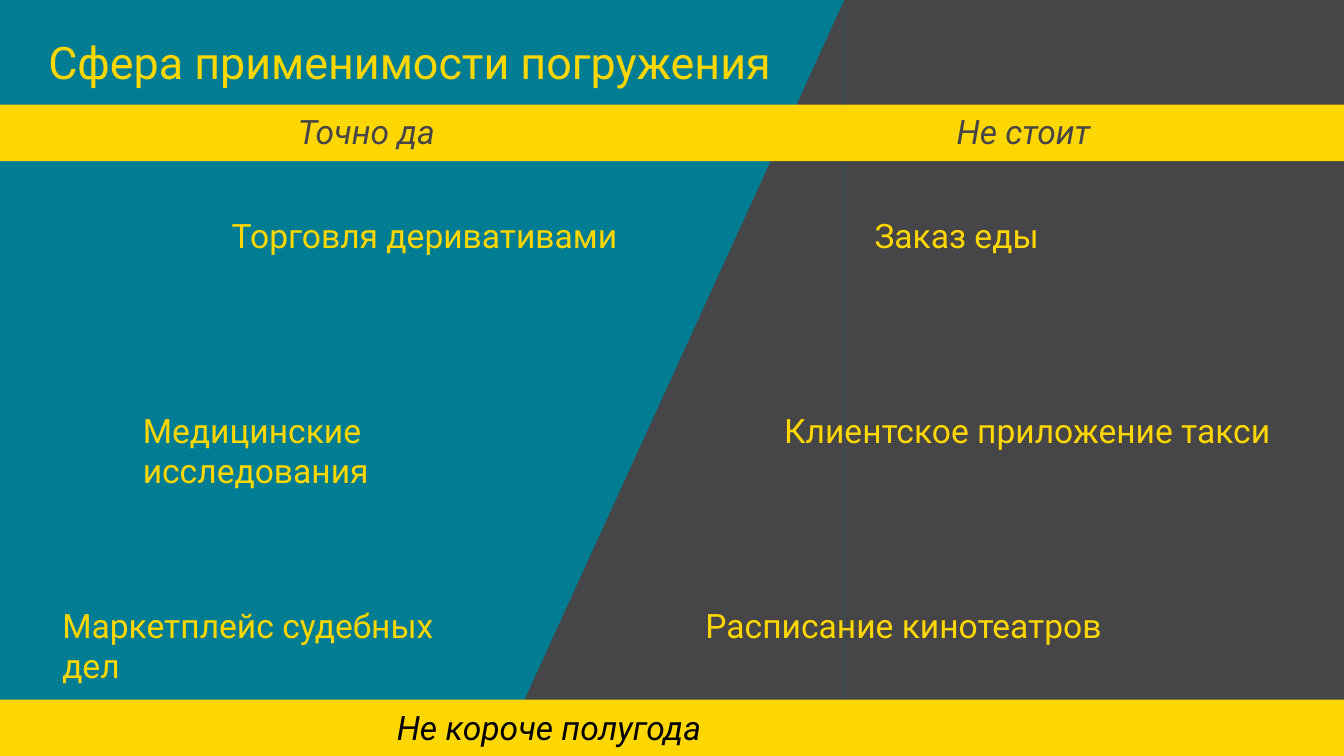
from pptx import Presentation
from pptx import util as u
from pptx.dml.color import RGBColor
from pptx.enum import shapes, text

TEAL, GREY, GOLD, BLACK = "007D92", "464547", "FFD700", "000000"
WIDTH, HEIGHT = 33.87, 19.05
BAND_TOP, BAND_HEIGHT = 2.64, 1.42
LINE_HEIGHT = 1.27
ROW_PITCH = 4.92


def rgb(value):
    return RGBColor.from_string(value)


def add_block(slide, kind, box, color):
    sp = slide.shapes.add_shape(kind, *map(u.Cm, box))
    sp.shadow.inherit = False
    sp.fill.solid()
    sp.fill.fore_color.rgb = rgb(color)
    sp.line.fill.background()
    return sp


def add_label(slide, box, words, size=24, color=GOLD, italic=None,
              align=None, wrap=True):
    tf = slide.shapes.add_textbox(*map(u.Cm, box)).text_frame
    tf.word_wrap = wrap
    tf.auto_size = text.MSO_AUTO_SIZE.SHAPE_TO_FIT_TEXT
    p = tf.paragraphs[0]
    p.text = words
    p.alignment = align
    p.font.name = "Roboto"
    p.font.size = u.Pt(size)
    p.font.italic = italic
    p.font.color.rgb = rgb(color)


def add_slanted_panel(slide, box, slant):
    """Dark panel whose left edge leans to the right."""
    x, y, w, h = box
    add_block(slide, shapes.MSO_SHAPE.RECTANGLE, (x + slant, y, w - slant, h), GREY)
    wedge = add_block(slide, shapes.MSO_SHAPE.ISOSCELES_TRIANGLE, (x, y, slant, h), GREY)
    wedge.adjustments[0] = 1


def add_band(slide, box, labels, color, align=None, wrap=True):
    """Gold band with italic labels given as (offset, top gap, width, words)."""
    x, y, w, h = box
    add_block(slide, shapes.MSO_SHAPE.RECTANGLE, box, GOLD)
    for dx, dy, width, words in labels:
        add_label(slide, (x + dx, y + dy, width, LINE_HEIGHT), words,
                  color=color, italic=True, align=align, wrap=wrap)


def add_examples(slide, box, examples):
    """Evenly spaced rows, each with its own offset and width."""
    x, y, w, h = box
    for row, (dx, width, words) in enumerate(examples):
        add_label(slide, (x + dx, y + row * ROW_PITCH, width, LINE_HEIGHT), words)


def build_slide(prs):
    slide = prs.slides.add_slide(prs.slide_layouts[6])
    slide.background.fill.solid()
    slide.background.fill.fore_color.rgb = rgb(TEAL)

    # Background panel and title
    add_slanted_panel(slide, (12.57, 0, WIDTH - 12.57, HEIGHT), 8.71)
    add_label(slide, (0.97, 0.76, 18.95, 1.63), "Сфера применимости погружения",
              size=32, wrap=False)

    # Column headings
    add_band(slide, (0, BAND_TOP, WIDTH, BAND_HEIGHT),
             [(5.69, 0.03, 7.09, "Точно да"), (23.09, 0.03, 5.41, "Не стоит")],
             GREY, align=text.PP_ALIGN.CENTER)

    # Examples on both sides of the slant
    add_examples(slide, (1.32, 5.28, 15.22, 11.11), [
        (4.27, 10.95, "Торговля деривативами"),
        (2.03, 11.76, "Медицинские исследования"),
        (0, 11.46, "Маркетплейс судебных дел"),
    ])
    add_examples(slide, (17.53, 5.28, 15.37, 11.11), [
        (4.26, 7.29, "Заказ еды"),
        (1.98, 13.39, "Клиентское приложение такси"),
        (0, 14.07, "Расписание кинотеатров"),
    ])

    # Footer
    add_band(slide, (0, HEIGHT - BAND_HEIGHT, WIDTH, BAND_HEIGHT),
             [(9.75, 0.07, 8.41, "Не короче полугода")], BLACK, wrap=False)


def main():
    prs = Presentation()
    prs.slide_width, prs.slide_height = u.Cm(WIDTH), u.Cm(HEIGHT)
    build_slide(prs)
    prs.save("out.pptx")


if __name__ == "__main__":
    main()
